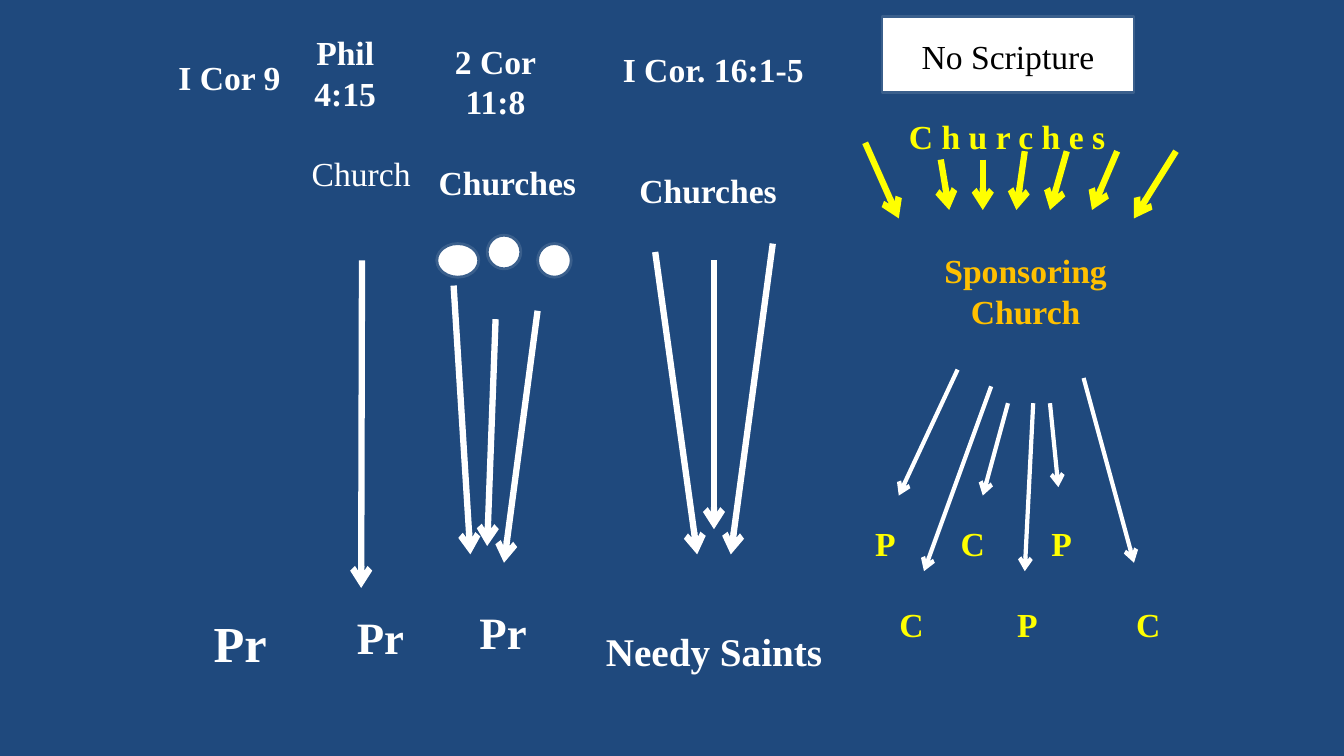
"""Build a slide on how churches sent support, by scripture and by sponsoring church."""
from lxml.etree import SubElement
from pptx import Presentation
from pptx.dml.color import RGBColor
from pptx.enum.shapes import MSO_CONNECTOR as Line, MSO_SHAPE as Shape
from pptx.enum.text import MSO_ANCHOR as Anchor, PP_ALIGN as Align
from pptx.oxml.ns import qn
from pptx.util import Inches, Pt

WHITE, YELLOW, GOLD, NAVY, EDGE = "FFFFFF", "FFFF00", "FFC000", "1F497D", "3A5F8C"
CELL = Inches(1) // 12

deck = Presentation()
deck.slide_width, deck.slide_height = 160 * CELL, 90 * CELL
slide = deck.slides.add_slide(deck.slide_layouts[6])
slide.background.fill.solid()
slide.background.fill.fore_color.rgb = RGBColor.from_string(NAVY)


def cells(*counts):
    return [round(count * CELL) for count in counts]


def write(words, x, y, size=24, color=WHITE, bold=True, width=30, height=10):
    box = slide.shapes.add_textbox(*cells(x - width / 2, y - height / 2, width, height))
    frame = box.text_frame
    frame.word_wrap = True
    frame.vertical_anchor = Anchor.MIDDLE
    frame.margin_left = frame.margin_right = frame.margin_top = frame.margin_bottom = 0
    frame.text = words
    for paragraph in frame.paragraphs:
        paragraph.alignment = Align.CENTER
        font = paragraph.runs[0].font
        font.name, font.size, font.bold = "Times New Roman", Pt(size), bold
        font.color.rgb = RGBColor.from_string(color)


blocks = [
    (Shape.OVAL, 58, 28, 4, 4),
    (Shape.OVAL, 64, 29, 4, 4),
    (Shape.OVAL, 52, 29, 5, 4),
    (Shape.RECTANGLE, 105, 2, 30, 9),
]
for outline, *place in blocks:
    block = slide.shapes.add_shape(outline, *cells(*place))
    block.shadow.inherit = False
    block.fill.solid()
    block.fill.fore_color.rgb = RGBColor.from_string(WHITE)
    block.line.color.rgb = RGBColor.from_string(EDGE)
    block.line.width = Pt(2)

direct_support = [
    (43.1, 31, 43, 70),
    (54, 34, 56, 66), (59, 38, 58, 65), (64, 37, 60, 67),
    (78, 30, 83, 66), (85, 31, 85, 63), (92, 29, 87, 66),
]
to_sponsor = [
    (103, 17, 107, 26), (112, 19, 113, 25), (117, 19, 117, 25), (122, 18, 121, 25),
    (127, 18, 125, 25), (133, 18, 130, 25), (140, 18, 135, 26),
]
from_sponsor = [
    (114, 44, 107, 59), (118, 46, 110, 68), (120, 48, 117, 59),
    (123, 48, 122, 68), (125, 48, 126, 58), (129, 45, 135, 67),
]
flows = [(direct_support, WHITE, 4.5), (to_sponsor, YELLOW, 4.5), (from_sponsor, WHITE, 3)]
for arrows, color, weight in flows:
    for ends in arrows:
        arrow = slide.shapes.add_connector(Line.STRAIGHT, *cells(*ends))
        arrow.line.color.rgb = RGBColor.from_string(color)
        arrow.line.width = Pt(weight)
        SubElement(arrow.line._get_or_add_ln(), qn("a:tailEnd"), type="arrow")
        SubElement(arrow._element.spPr, qn("a:effectLst"))

write("I Cor 9", 27.3, 9.2)
write("Phil\n4:15", 41.1, 8.65)
write("2 Cor\n11:8", 59, 9.65)
write("I Cor. 16:1-5", 84.9, 8.2)
write("No Scripture", 120, 6.7, color="000000", bold=False)

write("Church", 43, 20.6, bold=False)
write("Churches", 60.4, 21.7)
write("Churches", 84.3, 22.6)
write("C h u r c h e s", 119.9, 16.2, color=YELLOW)
write("Sponsoring\nChurch", 122.1, 34.6, color=GOLD)

write("Pr", 28.6, 76.5, size=36)
write("Pr", 45.3, 75.8, size=32)
write("Pr", 59.9, 75.2, size=32)
write("Needy Saints", 85, 77.5, size=28)

receivers = [
    (64.6, [("P", 105.4), ("C", 115.8), ("P", 126.4)]),
    (74.3, [("C", 108.5), ("P", 122.3), ("C", 136.7)]),
]
for y, row in receivers:
    for letter, x in row:
        write(letter, x, y, color=YELLOW, width=6)

deck.save("out.pptx")
